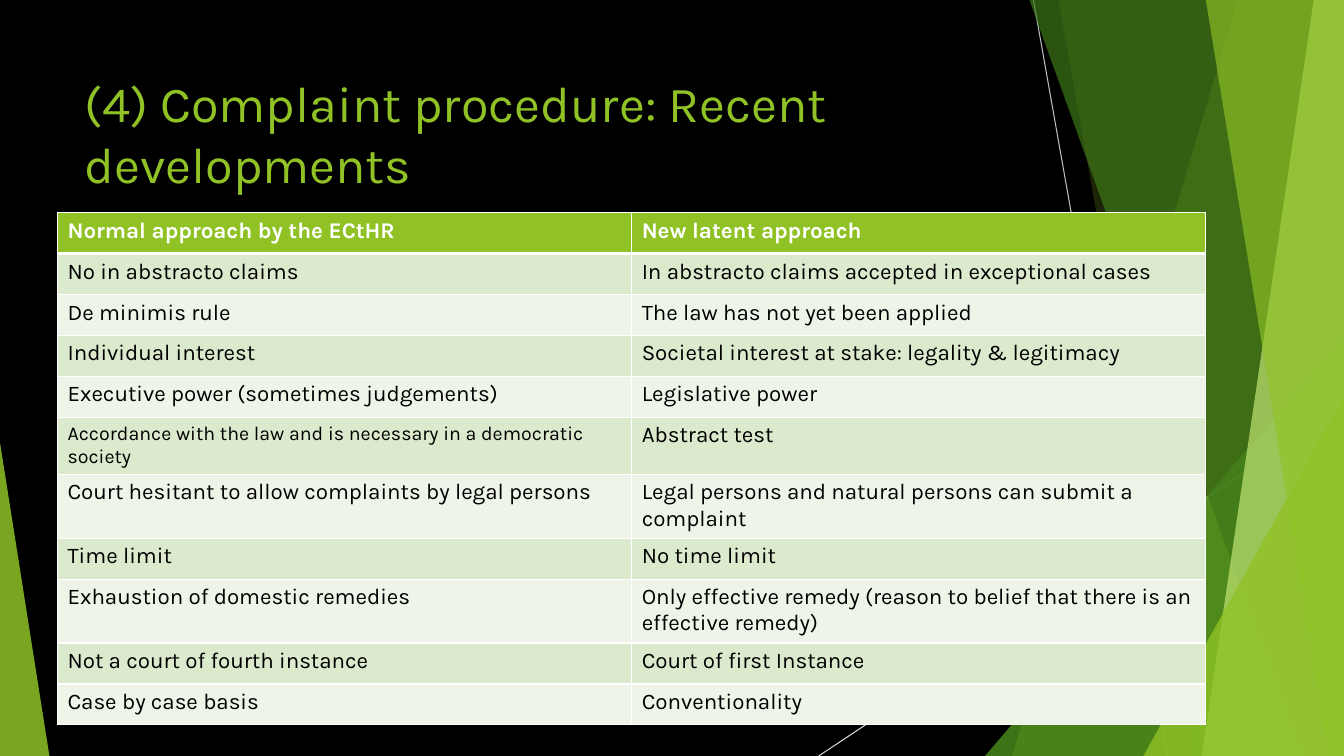
"""Build a slide comparing two approaches to the complaint procedure."""
import pptx
import pptx.dml.color
import pptx.enum.shapes
import pptx.enum.text
import pptx.oxml
import pptx.oxml.ns
import pptx.util
from pptx.util import Inches

FONT = "Karla"
W, H = 13.33, 7.5
COLORS = {
    "black": "000000", "white": "FFFFFF", "lime": "90C226", "green": "54A021",
    "forest": "3F7819", "pale": "C0E474", "band_dark": "DBE9CD",
    "band_light": "EEF4E8", "grey": "BFBFBF", "light_grey": "D9D9D9",
}
ROWS = [
    ("Normal approach by the ECtHR", "New latent approach"),
    ("No in abstracto claims", "In abstracto claims accepted in exceptional cases"),
    ("De minimis rule", "The law has not yet been applied"),
    ("Individual interest", "Societal interest at stake: legality & legitimacy"),
    ("Executive power (sometimes judgements)", "Legislative power"),
    ("Accordance with the law and is necessary in a democratic society", "Abstract test"),
    ("Court hesitant to allow complaints by legal persons",
     "Legal persons and natural persons can submit a complaint"),
    ("Time limit", "No time limit"),
    ("Exhaustion of domestic remedies",
     "Only effective remedy (reason to belief that there is an effective remedy)"),
    ("Not a court of fourth instance", "Court of first Instance"),
    ("Case by case basis", "Conventionality"),
]
TABLE_HEIGHT = 5.04
TALL_ROWS = {5: 0.55, 6: 0.62, 8: 0.62}
SMALL_CELL = (5, 0)


def rgb(name):
    """Return the named colour."""
    return pptx.dml.color.RGBColor.from_string(COLORS[name])


def style_text(p, size, color, bold=False):
    """Format the runs of a paragraph."""
    for r in p.runs:
        r.font.name = FONT
        r.font.size = pptx.util.Pt(size)
        r.font.bold = bold
        r.font.color.rgb = rgb(color)


def paint(sp, color, opacity):
    """Give a shape a translucent fill without line or shadow."""
    sp.shadow.inherit = False
    sp.fill.solid()
    sp.fill.fore_color.rgb = rgb(color)
    clr = sp._element.spPr.find(".//" + pptx.oxml.ns.qn("a:srgbClr"))
    alpha = clr.makeelement(pptx.oxml.ns.qn("a:alpha"), {"val": str(opacity * 1000)})
    clr.append(alpha)
    sp.line.fill.background()


def add_line(s, start, end, color):
    """Draw a thin straight line."""
    kind = pptx.enum.shapes.MSO_CONNECTOR.STRAIGHT
    cx = s.shapes.add_connector(kind, *map(Inches, start + end))
    cx.line.color.rgb = rgb(color)
    cx.line.width = pptx.util.Pt(0.75)
    spPr = cx._element.spPr
    spPr.append(spPr.makeelement(pptx.oxml.ns.qn("a:effectLst"), {}))


def add_facet(s, top_x, bottom_x, color, opacity):
    """Draw a full-height facet that reaches the right edge."""
    points = [(Inches(x), Inches(y)) for x, y in
              [(top_x, 0), (W, 0), (W, H), (bottom_x, H)]]
    builder = s.shapes.build_freeform(*points[0])
    builder.add_line_segments(points[1:], close=True)
    paint(builder.convert_to_shape(), color, opacity)


def add_corner(s, left, top, width, apex, color, opacity):
    """Draw a triangle standing on the bottom edge."""
    kind = pptx.enum.shapes.MSO_SHAPE.ISOSCELES_TRIANGLE
    sp = s.shapes.add_shape(kind, *map(Inches, (left, top, width, H - top)))
    sp.adjustments[0] = apex
    paint(sp, color, opacity)


def add_title(s, text):
    """Add the slide title."""
    sp = s.shapes.add_textbox(*map(Inches, (0.74, 0.67, 9.4, 1.44)))
    tf = sp.text_frame
    tf.word_wrap = True
    tf.vertical_anchor = pptx.enum.text.MSO_ANCHOR.TOP
    tf.text = text
    style_text(tf.paragraphs[0], 36, "lime")


def set_borders(cell, widths):
    """Draw white cell borders with the given widths in points."""
    tcPr = cell._tc.get_or_add_tcPr()
    for side, width in widths.items():
        tcPr.append(pptx.oxml.parse_xml(
            f'<a:ln{side} {pptx.oxml.ns.nsdecls("a")} w="{pptx.util.Pt(width)}">'
            f'<a:solidFill><a:srgbClr val="{COLORS["white"]}"/></a:solidFill>'
            f'</a:ln{side}>'))


def fill_cell(cell, text, row, col):
    """Write and style one table cell."""
    header = row == 0
    set_borders(cell, {"L": 1, "R": 1, "T": 3 if row == 1 else 1, "B": 3 if header else 1})
    cell.fill.solid()
    band = "band_dark" if row % 2 else "band_light"
    cell.fill.fore_color.rgb = rgb("lime" if header else band)
    cell.text_frame.text = text
    size = 14 if (row, col) == SMALL_CELL else 16
    style_text(cell.text_frame.paragraphs[0], size, "white" if header else "black", header)


def add_comparison(s):
    """Add the table comparing the approaches."""
    frame = s.shapes.add_table(len(ROWS), 2, *map(Inches, (0.57, 2.11, 11.39, TABLE_HEIGHT)))
    table = frame.table
    table.horz_banding = False
    normal = (TABLE_HEIGHT - sum(TALL_ROWS.values())) / (len(ROWS) - len(TALL_ROWS))
    for i, texts in enumerate(ROWS):
        table.rows[i].height = Inches(TALL_ROWS.get(i, normal))
        for j, text in enumerate(texts):
            fill_cell(table.cell(i, j), text, i, j)


def main():
    """Build and save the slide."""
    prs = pptx.Presentation()
    prs.slide_width, prs.slide_height = Inches(W), Inches(H)
    s = prs.slides.add_slide(prs.slide_layouts[6])
    s.background.fill.solid()
    s.background.fill.fore_color.rgb = rgb("black")

    add_line(s, (10.25, 0), (11.58, H), "grey")
    add_line(s, (W, 4.03), (8.12, H), "light_grey")
    add_facet(s, 12.28, 10.04, "lime", 30)
    add_facet(s, 10.5, 11.83, "lime", 20)
    add_corner(s, 9.77, 3.33, 3.56, 1, "green", 72)
    add_facet(s, 10.21, 12.91, "forest", 70)
    add_facet(s, 13.03, 11.92, "pale", 70)
    add_facet(s, 11.96, 13.18, "lime", 65)
    add_corner(s, 11.34, 3.93, 1.99, 1, "lime", 80)
    add_corner(s, 0, 4.39, 0.49, 0, "lime", 85)

    add_title(s, "(4) Complaint procedure: Recent developments")
    add_comparison(s)
    prs.save("out.pptx")


if __name__ == "__main__":
    main()
